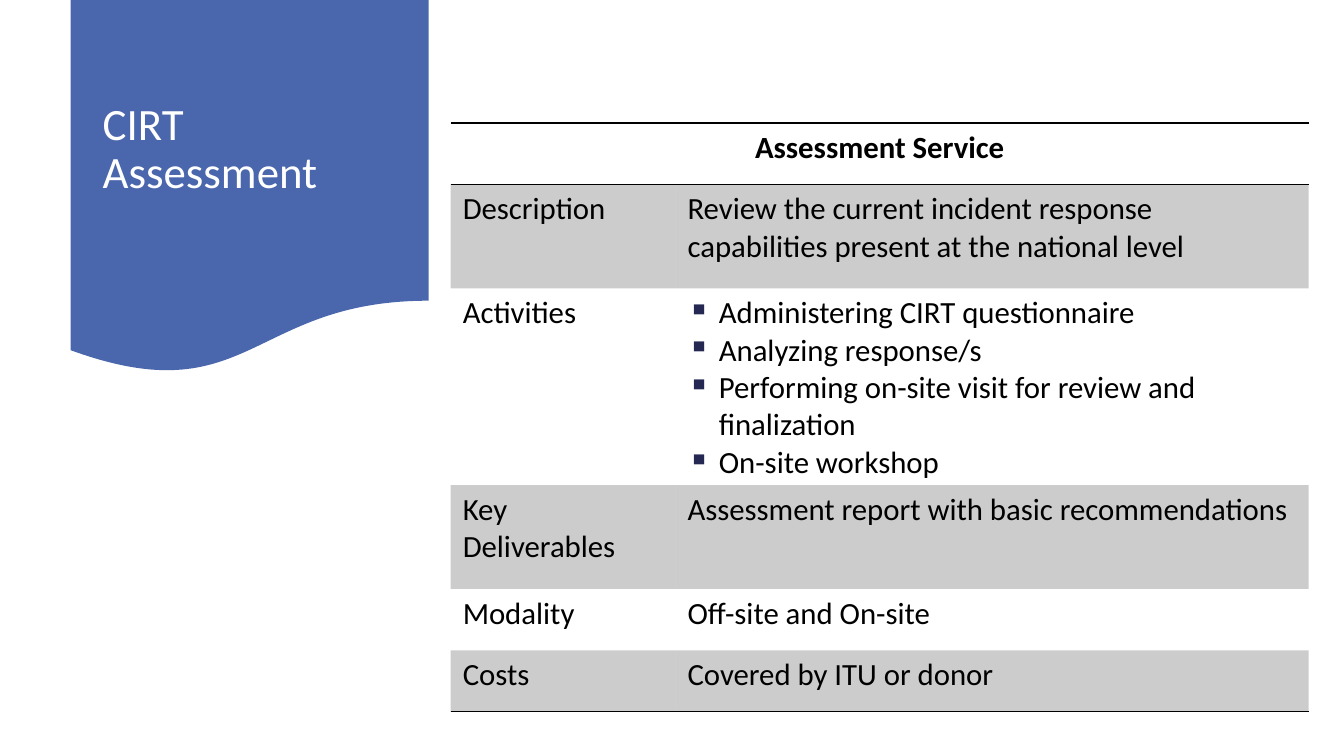
from lxml import etree
from pptx import Presentation
from pptx.dml.color import RGBColor
from pptx.enum.shapes import MSO_SHAPE
from pptx.enum.text import MSO_ANCHOR as Anchor, PP_ALIGN as Align
from pptx.oxml import parse_xml
from pptx.oxml.ns import nsdecls, qn
from pptx.util import Pt

PX = 9144  # 100 px to the inch
BLACK, WHITE, BLUE, NAVY = "000000", "FFFFFF", "4A66AC", "242852"
NO_GRID_STYLE = "{2D5ABB26-0587-4C30-8999-92F81FD0307C}"


def write(frame, text, size=22, color=BLACK, bold=False, align=Align.LEFT,
          spacing=None, bullet=None):
    """Put each line of text in its own paragraph."""
    for index, line in enumerate(text.split("\n")):
        paragraph = frame.add_paragraph() if index else frame.paragraphs[0]
        if bullet:
            properties = paragraph._p.get_or_add_pPr()
            properties.set("marL", str(31 * PX))
            properties.set("indent", str(-31 * PX))
            properties.append(parse_xml(
                f'<a:buClr {nsdecls("a")}><a:srgbClr val="{NAVY}"/></a:buClr>'))
            properties.append(parse_xml(f'<a:buChar {nsdecls("a")} char="{bullet}"/>'))
        paragraph.alignment = align
        if spacing:
            paragraph.line_spacing = spacing
        run = paragraph.add_run()
        run.text = line
        run.font.name = "Calibri"
        run.font.size = Pt(size)
        run.font.bold = bold
        run.font.color.rgb = RGBColor.from_string(color)


def add_border(cell, side):
    """Draw a 1 pt black border; borders must come before the cell's fill."""
    properties = cell._tc.get_or_add_tcPr()
    border = parse_xml(
        f'<a:ln{side} {nsdecls("a")} w="12700"><a:solidFill>'
        f'<a:srgbClr val="{BLACK}"/></a:solidFill></a:ln{side}>')
    properties.insert(len(properties) - 1, border)


presentation = Presentation()
presentation.slide_width, presentation.slide_height = 1333 * PX, 750 * PX
slide = presentation.slides.add_slide(presentation.slide_layouts[6])

# Blue banner
banner = slide.shapes.add_shape(
    MSO_SHAPE.FLOWCHART_DOCUMENT, 70 * PX, 0, 355 * PX, 372 * PX)
banner.shadow.inherit = False
banner.fill.solid()
banner.fill.fore_color.rgb = RGBColor.from_string(BLUE)
banner.line.fill.background()

# Title
title = slide.shapes.add_textbox(92 * PX, 19 * PX, 311 * PX, 259 * PX).text_frame
title.word_wrap = True
title.vertical_anchor = Anchor.MIDDLE
write(title, "CIRT Assessment", size=32, color=WHITE, spacing=0.9)

# Service table
rows = [
    ("Assessment Service", "", 61),
    ("Description", "Review the current incident response capabilities "
     "present at the national level", 103),
    ("Activities", "Administering CIRT questionnaire\nAnalyzing response/s\n"
     "Performing on-site visit for review and finalization\nOn-site workshop", 187),
    ("Key Deliverables", "Assessment report with basic recommendations", 103),
    ("Modality", "Off-site and On-site", 61),
    ("Costs", "Covered by ITU or donor", 61),
]
table_height = sum(height for *_, height in rows)
table = slide.shapes.add_table(
    len(rows), 2, 447 * PX, 122 * PX, 851 * PX, table_height * PX).table
table.first_row = table.horz_banding = False
table._tbl.tblPr.find(qn("a:tableStyleId")).text = NO_GRID_STYLE
for column, width in zip(table.columns, (223, 628)):
    column.width = width * PX
table.cell(0, 0).merge(table.cell(0, 1))

for row, (label, details, height) in enumerate(rows):
    table.rows[row].height = height * PX
    for column, text in enumerate((label, details)):
        cell = table.cell(row, column)
        cell.margin_left = cell.margin_right = 12 * PX
        cell.margin_top = cell.margin_bottom = 6 * PX

        # Every second row is 20 % black
        if row % 2:
            cell.fill.solid()
            cell.fill.fore_color.rgb = RGBColor.from_string(BLACK)
            shade = cell._tc.tcPr.find(".//" + qn("a:srgbClr"))
            etree.SubElement(shade, qn("a:alpha"), val="20000")
        else:
            cell.fill.background()

        # Rules around the heading and below the last row
        if row == 0:
            add_border(cell, "T")
        if row in (0, len(rows) - 1):
            add_border(cell, "B")

        if text:
            write(cell.text_frame, text, bold=row == 0,
                  align=Align.LEFT if row else Align.CENTER,
                  bullet="▪" if "\n" in text else None)

presentation.save("out.pptx")
